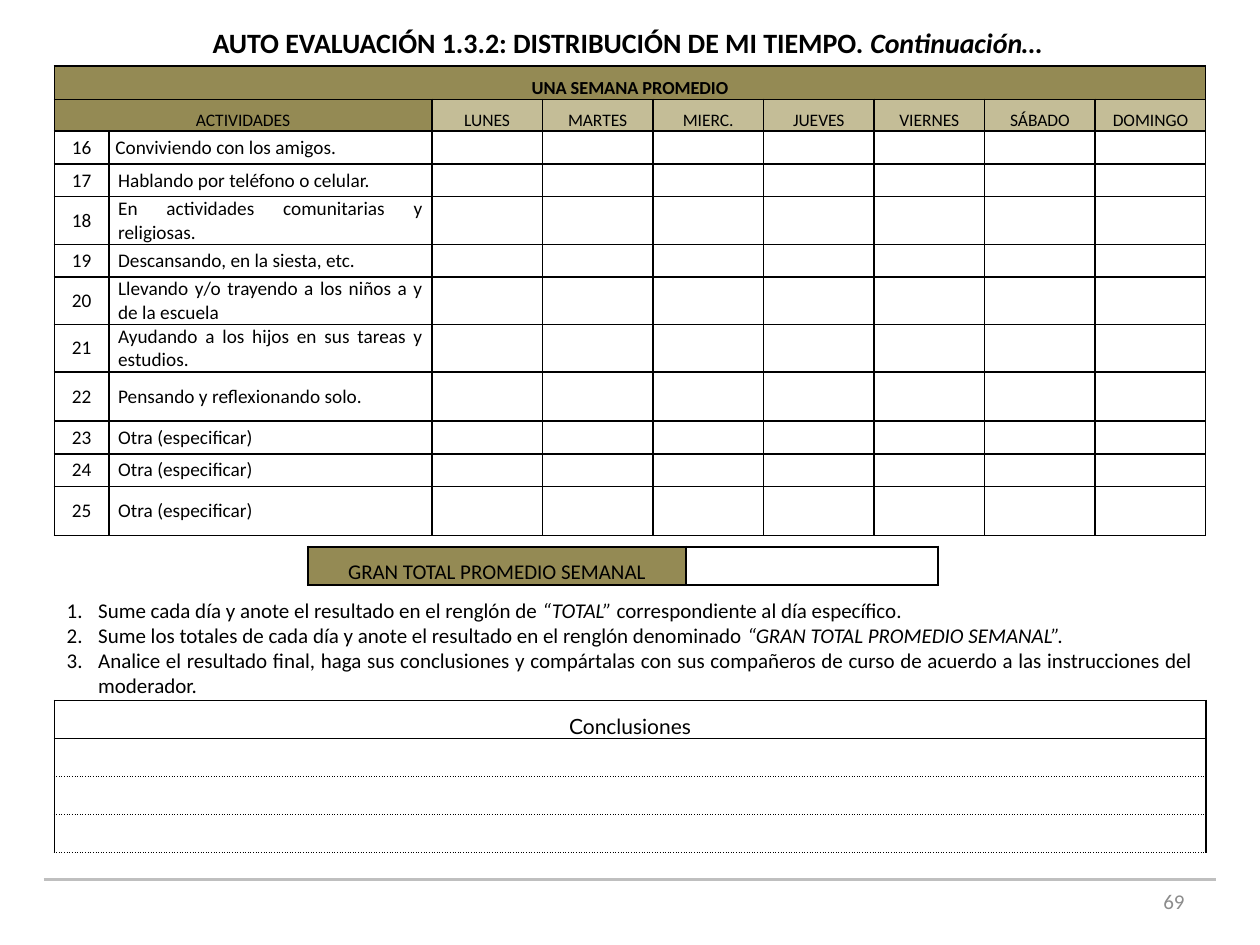
from lxml.etree import SubElement
from pptx import Presentation
from pptx.dml.color import RGBColor
from pptx.enum.shapes import MSO_CONNECTOR
from pptx.enum.text import MSO_ANCHOR as Anchor, MSO_AUTO_SIZE as AutoSize, PP_ALIGN as Align
from pptx.oxml import parse_xml
from pptx.oxml.ns import nsdecls, qn
from pptx.util import Pt

OLIVE, SAND, WHITE, BLACK = "948A54", "C4BD97", "FFFFFF", "000000"
LEFT = 31
THIN, THICK = (1, "solid"), (1.5, "solid")
DOTTED = (1, "sysDot")

DAYS = ["LUNES", "MARTES", "MIERC.", "JUEVES", "VIERNES", "SÁBADO", "DOMINGO"]
# Activity and row height
ACTIVITIES = [
    ("Conviviendo con los amigos.", 18.7),
    ("Hablando por teléfono o celular.", 18.7),
    ("En actividades comunitarias y religiosas.", 27.2),
    ("Descansando, en la siesta, etc.", 18.7),
    ("Llevando y/o trayendo a los niños a y de la escuela", 27.2),
    ("Ayudando a los hijos en sus tareas y estudios.", 27.2),
    ("Pensando y reflexionando solo.", 28),
    ("Otra (especificar)", 18.7),
    ("Otra (especificar)", 18.7),
    ("Otra (especificar)", 28),
]
INSTRUCTIONS = [
    [("Sume cada día y anote el resultado en el renglón de ", {}),
     ("“TOTAL”", {"italic": True}),
     (" correspondiente al día específico.", {})],
    [("Sume los totales de cada día y anote el resultado en el renglón denominado ", {}),
     ("“GRAN TOTAL PROMEDIO SEMANAL”.", {"italic": True})],
    [("Analice el resultado final, haga sus conclusiones y compártalas con sus compañeros "
      "de curso de acuerdo a las instrucciones del moderador.", {})],
]


def color(value):
    return RGBColor.from_string(value)


class SlideBuilder:
    def __init__(self, slide, font="Calibri"):
        self.slide = slide
        self.font = font

    def add_runs(self, paragraph, runs, align, size, ink=BLACK, **formats):
        paragraph.alignment = align
        for text, extra in runs:
            run = paragraph.add_run()
            run.text = text
            run.font.color.rgb = color(ink)
            values = {"name": self.font, "size": Pt(size), **formats, **extra}
            for name, value in values.items():
                setattr(run.font, name, value)

    def place(self, shape, left, top, width, height, anchor):
        box = {"left": left, "top": top, "width": width, "height": height}
        for name, value in box.items():
            setattr(shape, name, Pt(value))
        shape.text_frame.auto_size = AutoSize.NONE
        shape.text_frame.vertical_anchor = anchor

    def title(self, runs, box):
        shape = self.slide.shapes.title
        self.place(shape, *box, Anchor.MIDDLE)
        shape.text_frame.word_wrap = False
        self.add_runs(shape.text_frame.paragraphs[0], runs, Align.CENTER, 16, bold=True)

    def text(self, paragraphs, box, align, size, ink=BLACK, anchor=Anchor.TOP, numbered=False):
        shape = self.slide.shapes.add_textbox(0, 0, 0, 0)
        self.place(shape, *box, anchor)
        frame = shape.text_frame
        frame.word_wrap = True
        for index, runs in enumerate(paragraphs):
            paragraph = frame.add_paragraph() if index else frame.paragraphs[0]
            if numbered:
                properties = paragraph._p.get_or_add_pPr()
                properties.set("marL", str(Pt(18)))
                properties.set("indent", str(-Pt(18)))
                SubElement(properties, qn("a:buFont"), typeface="+mj-lt")
                SubElement(properties, qn("a:buAutoNum"), type="arabicPeriod")
            self.add_runs(paragraph, runs, align, size, ink)

    def rule(self, left, right, y, ink, width):
        line = self.slide.shapes.add_connector(
            MSO_CONNECTOR.STRAIGHT, Pt(left), Pt(y), Pt(right), Pt(y))
        line.line.color.rgb = color(ink)
        line.line.width = Pt(width)
        SubElement(line._element.spPr, qn("a:effectLst"))

    def table(self, left, top, columns, rows):
        frame = self.slide.shapes.add_table(
            len(rows), len(columns), Pt(left), Pt(top), Pt(sum(columns)), Pt(sum(rows)))
        table = frame.table
        table.first_row = table.horz_banding = False
        for column, width in zip(table.columns, columns):
            column.width = Pt(width)
        for row, height in zip(table.rows, rows):
            row.height = Pt(height)
        return table

    def cell(self, cell, text="", align=Align.CENTER, size=10, fill=WHITE, inset=5.2,
             spacing=None, borders=None, **formats):
        margins = {"margin_left": inset, "margin_right": inset,
                   "margin_top": 0, "margin_bottom": 0}
        for name, value in margins.items():
            setattr(cell, name, Pt(value))
        cell.vertical_anchor = Anchor.MIDDLE
        cell.fill.solid()
        cell.fill.fore_color.rgb = color(fill)
        paragraph = cell.text_frame.paragraphs[0]
        if spacing:
            paragraph.line_spacing = spacing
        if text:
            self.add_runs(paragraph, [(text, {})], align, size, **formats)
        else:
            SubElement(paragraph._p, qn("a:endParaRPr"), sz=str(size * 100))
        # Border elements come before the fill, in the order L, R, T, B
        properties = cell._tc.get_or_add_tcPr()
        for index, side in enumerate("LRTB"):
            width, dash = (borders or {}).get(side, THIN)
            properties.insert(index, parse_xml(
                f'<a:ln{side} {nsdecls("a")} w="{Pt(width)}"><a:solidFill>'
                f'<a:srgbClr val="{BLACK}"/></a:solidFill>'
                f'<a:prstDash val="{dash}"/></a:ln{side}>'))


def add_week_table(builder):
    heights = [19.2, 18.3] + [height for _, height in ACTIVITIES]
    table = builder.table(LEFT, 37.6, [31.3, 184.4] + [63.2] * len(DAYS), heights)
    table.cell(0, 0).merge(table.cell(0, 8))
    table.cell(1, 0).merge(table.cell(1, 1))

    # Header rows
    header = {"inset": 3.6, "spacing": 1.5}
    for column in range(9):
        builder.cell(table.cell(0, column), "" if column else "UNA SEMANA PROMEDIO",
                     size=10 if column else 10.5, fill=OLIVE, bold=True, **header)
    for column, label in enumerate(["ACTIVIDADES", ""] + DAYS):
        borders = {"B": THICK}
        if column < 3:
            borders["L" if column == 2 else "R"] = THICK
        builder.cell(table.cell(1, column), label, fill=OLIVE if column < 2 else SAND,
                     borders=borders, **header)

    # Numbered activities with blank day cells
    for row, (activity, _) in enumerate(ACTIVITIES, start=2):
        for column in range(9):
            borders = {"T": THICK} if row == 2 else {}
            if column in (1, 2):
                borders["R" if column == 1 else "L"] = THICK
            label = {0: str(row + 14), 1: activity}.get(column, "")
            builder.cell(table.cell(row, column), label, size=11, borders=borders,
                         align=Align.JUSTIFY if column == 1 else Align.CENTER,
                         inset=3.6 if row == 2 else 5.2)


def add_total_table(builder):
    table = builder.table(176, 312.5, [216, 144], [22])
    frame = dict.fromkeys("LRTB", THICK)
    builder.cell(table.cell(0, 0), "GRAN TOTAL PROMEDIO SEMANAL", size=12, fill=OLIVE,
                 spacing=1.5, borders=frame)
    builder.cell(table.cell(0, 1), borders=frame)


def add_conclusions_table(builder):
    table = builder.table(LEFT, 400.3, [658.1], [21.7] * 4)
    builder.cell(table.cell(0, 0), "Conclusiones", size=12, spacing=1.5, name="Lato")
    for row in range(1, 4):
        builder.cell(table.cell(row, 0),
                     borders={"T": THIN if row == 1 else DOTTED, "B": DOTTED})


def main():
    presentation = Presentation()
    presentation.slide_width, presentation.slide_height = Pt(720), Pt(540)
    builder = SlideBuilder(presentation.slides.add_slide(presentation.slide_layouts[5]))

    # Footer rule and page number
    builder.rule(25, 695, 502.5, "BFBFBF", 2)
    builder.text([[("69", {})]], (516, 500.5, 168, 28.8), Align.RIGHT, 12,
                 ink="8C8C8C", anchor=Anchor.MIDDLE)

    # Title and weekly schedule
    builder.title([("AUTO EVALUACIÓN 1.3.2: DISTRIBUCIÓN DE MI TIEMPO. ", {}),
                   ("Continuación…", {"italic": True})], (112.5, 11, 492, 26.6))
    add_week_table(builder)
    add_total_table(builder)

    # Instructions and conclusions
    builder.text(INSTRUCTIONS, (LEFT, 337.8, 658, 65.4), Align.JUSTIFY, 12, numbered=True)
    add_conclusions_table(builder)
    presentation.save("out.pptx")


if __name__ == "__main__":
    main()
